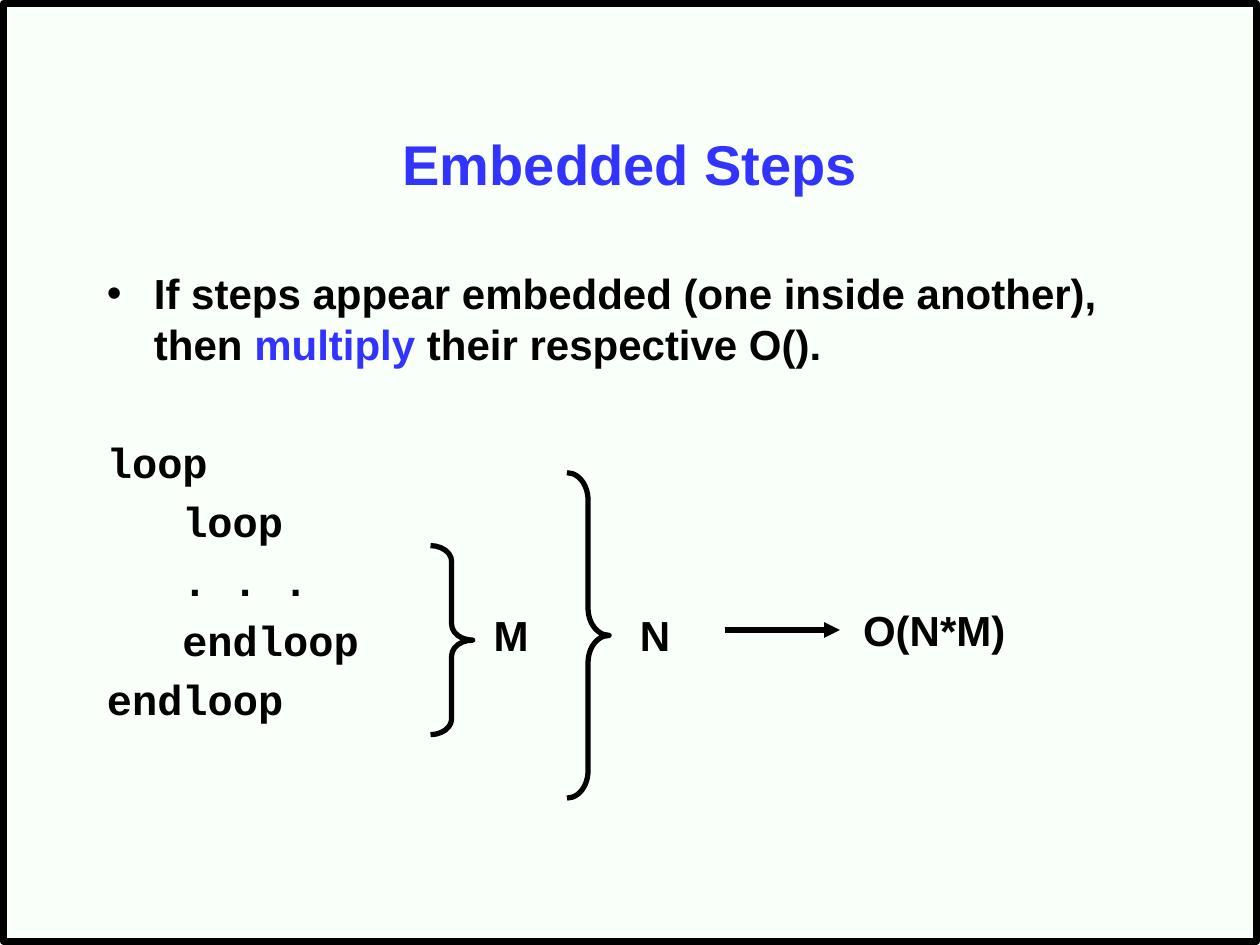
from lxml.etree import SubElement
from pptx import Presentation
from pptx.dml.color import RGBColor
from pptx.enum.shapes import MSO_CONNECTOR, MSO_SHAPE
from pptx.enum.text import MSO_ANCHOR, MSO_AUTO_SIZE, PP_ALIGN
from pptx.oxml.ns import qn
from pptx.util import Cm, Pt

COLORS = {"back": "F9FFF9", "ink": "000000", "accent": "3333FF"}
SANS, MONO = "Arial", "Courier New"
CODE = [("loop", 0), ("loop", 1), (". . .", 1), ("endloop", 1), ("endloop", 0)]
STEP = 1.52  # width of three code letters
GAP = 4.8


def color(name):
    return RGBColor.from_string(COLORS[name])


def place(shape, left, top, width, height):
    shape.left, shape.top = Cm(left), Cm(top)
    shape.width, shape.height = Cm(width), Cm(height)


def style(font, size=24, name=SANS, tint="ink"):
    font.size, font.name, font.bold = Pt(size), name, True
    font.color.rgb = color(tint)


def ink_line(shape, width):
    shape.line.color.rgb = color("ink")
    shape.line.width = Pt(width)


def indent(para, left, first=0):
    props = para._p.get_or_add_pPr()
    props.set("marL", str(Cm(left)))
    props.set("indent", str(Cm(first)))
    return props


def add_outline(slide, kind, left, top, width, height, weight):
    shape = slide.shapes.add_shape(
        kind, Cm(left), Cm(top), Cm(width), Cm(height))
    shape.shadow.inherit = False
    shape.fill.background()
    ink_line(shape, weight)
    return shape


def add_brace(slide, left, top, height, curve):
    brace = add_outline(
        slide, MSO_SHAPE.RIGHT_BRACE, left, top, 0.85, height, 3)
    brace.adjustments[0] = curve
    brace.adjustments[1] = 0.5


def add_label(slide, text, left, top, width):
    box = slide.shapes.add_textbox(Cm(left), Cm(top), Cm(width), Cm(1.28))
    frame = box.text_frame
    frame.word_wrap = False
    frame.auto_size = MSO_AUTO_SIZE.SHAPE_TO_FIT_TEXT
    frame.text = text
    style(frame.paragraphs[0].font)


def add_arrow(slide, start, end, level):
    arrow = slide.shapes.add_connector(
        MSO_CONNECTOR.STRAIGHT, Cm(start), Cm(level), Cm(end), Cm(level))
    ink_line(arrow, 3)
    SubElement(arrow.line._get_or_add_ln(), qn("a:tailEnd"), type="triangle")
    SubElement(arrow._element.spPr, qn("a:effectLst"))


def fill_title(title):
    place(title, 1.9, 1.7, 21.6, 3.18)
    frame = title.text_frame
    frame.text = "Embedded Steps"
    frame.vertical_anchor = MSO_ANCHOR.MIDDLE
    frame.auto_size = MSO_AUTO_SIZE.NONE
    para = frame.paragraphs[0]
    para.alignment = PP_ALIGN.CENTER
    style(para.font, 32, tint="accent")


def fill_body(body):
    place(body, 1.9, 5.26, 22.23, 11.66)
    frame = body.text_frame
    frame.auto_size = MSO_AUTO_SIZE.NONE
    rule = frame.paragraphs[0]
    rule.space_before = Pt(0)
    rule.line_spacing = Pt(29)
    indent(rule, 0.95, -0.95)
    parts = [
        ("If steps appear embedded (one inside another), then ", "ink"),
        ("multiply", "accent"),
        (" their respective O().", "ink"),
    ]
    for text, tint in parts:
        run = rule.add_run()
        run.text = text
        style(run.font, tint=tint)
    for row, (text, depth) in enumerate(CODE):
        para = frame.add_paragraph()
        para.text = text
        para.line_spacing = Pt(29)
        para.space_before = Pt(GAP if row else 29 + 2 * GAP)
        style(para.font, name=MONO)
        props = indent(para, depth * STEP)
        props.insert_element_before(
            props.makeelement(qn("a:buNone"), {}), "a:tabLst", "a:defRPr")


def main():
    deck = Presentation()
    deck.slide_width, deck.slide_height = Cm(25.4), Cm(19.05)
    slide = deck.slides.add_slide(deck.slide_layouts[1])
    slide.background.fill.solid()
    slide.background.fill.fore_color.rgb = color("back")
    add_outline(slide, MSO_SHAPE.RECTANGLE, 0.07, 0.07, 25.26, 18.91, 3.75)
    fill_title(slide.shapes.title)
    fill_body(slide.placeholders[1])
    add_brace(slide, 8.68, 11, 3.81, 0.375)
    add_brace(slide, 11.43, 9.53, 6.56, 0.646)
    add_label(slide, "M", 9.7, 12.17, 1.22)
    add_label(slide, "N", 12.65, 12.17, 1.12)
    add_arrow(slide, 14.61, 16.93, 12.7)
    add_label(slide, "O(N*M)", 17.15, 12.07, 3.38)
    deck.save("out.pptx")


if __name__ == "__main__":
    main()
